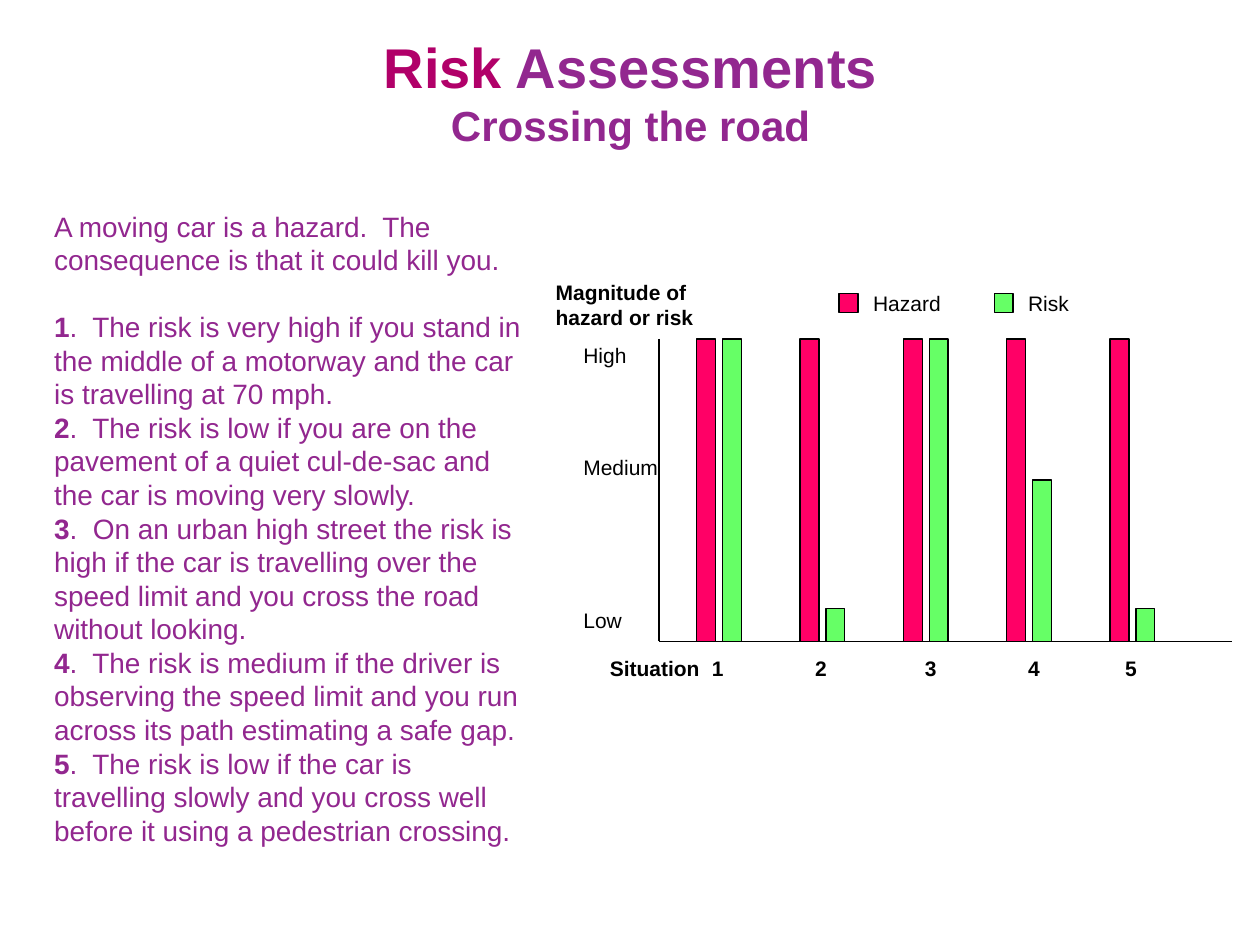
from dataclasses import dataclass

from lxml import etree
from pptx import Presentation
from pptx.dml.color import RGBColor
from pptx.enum.shapes import MSO_CONNECTOR, MSO_SHAPE
from pptx.enum.text import MSO_ANCHOR, MSO_AUTO_SIZE, PP_ALIGN
from pptx.oxml.ns import qn
from pptx.util import Inches, Pt

RECTANGLE = MSO_SHAPE.RECTANGLE
STRAIGHT = MSO_CONNECTOR.STRAIGHT
CENTER, LEFT = PP_ALIGN.CENTER, PP_ALIGN.LEFT
TOP = MSO_ANCHOR.TOP
NO_FIT = MSO_AUTO_SIZE.NONE


@dataclass(frozen=True)
class Theme:
    font: str = "Arial"
    purple: str = "92278F"
    crimson: str = "B10069"
    black: str = "000000"
    hazard: str = "FF0066"
    risk: str = "66FF66"
    title: int = 32
    subtitle: int = 24
    body: int = 16
    label: int = 12
    line: float = 0.75


THEME = Theme()

# Content
TITLE = ("Risk", " Assessments")
SUBTITLE = "Crossing the road"
INTRO = "A moving car is a hazard.  The consequence is that it could kill you."
SITUATIONS = [
    "The risk is very high if you stand in the middle of a motorway and the car "
    "is travelling at 70 mph.",
    "The risk is low if you are on the pavement of a quiet cul-de-sac and the car "
    "is moving very slowly.",
    "On an urban high street the risk is high if the car is travelling over the "
    "speed limit and you cross the road without looking.",
    "The risk is medium if the driver is observing the speed limit and you run "
    "across its path estimating a safe gap.",
    "The risk is low if the car is travelling slowly and you cross well before it "
    "using a pedestrian crossing.",
]
LEVELS = {"High": 2.4, "Medium": 1.28, "Low": 0.26}  # bar heights
LEVEL_TOPS = {"High": 2.69, "Medium": 3.58, "Low": 4.79}
# hazard level, risk level, offset of the number from the hazard bar
BARS = [
    ("High", "High", 0.05),
    ("High", "Low", 0.05),
    ("High", "High", 0.1),
    ("High", "Medium", 0.1),
    ("High", "Low", 0.05),
]
LEGEND = [("Hazard", THEME.hazard, 6.66), ("Risk", THEME.risk, 7.89)]

# Chart grid
AXIS_LEFT, AXIS_RIGHT = 5.23, 9.78
AXIS_TOP, BASELINE = 2.69, 5.09
FIRST_BAR, PITCH, PAIR_STEP, BAR_WIDTH = 5.53, 0.82, 0.205, 0.15
LABEL_HEIGHT = 0.26


def style(span, size, color, bold=False):
    span.font.name = THEME.font
    span.font.size = Pt(size)
    span.font.bold = bold
    span.font.color.rgb = RGBColor.from_string(color)


def place(box, left, top, width, height):
    box.left, box.top = Inches(left), Inches(top)
    box.width, box.height = Inches(width), Inches(height)


def add_span(para, text, size, color, bold=False):
    span = para.add_run()
    span.text = text
    style(span, size, color, bold)


def add_label(page, text, left, top, width, height=LABEL_HEIGHT, bold=False):
    box = page.shapes.add_textbox(
        Inches(left), Inches(top), Inches(width), Inches(height))
    frame = box.text_frame
    frame.word_wrap = True
    frame.margin_left = frame.margin_right = Inches(0.07)
    frame.margin_top = frame.margin_bottom = Inches(0.03)
    frame.text = text
    for para in frame.paragraphs:
        style(para.runs[0], THEME.label, THEME.black, bold)


def add_bar(page, left, top, height, color):
    bar = page.shapes.add_shape(
        RECTANGLE, Inches(left), Inches(top), Inches(BAR_WIDTH), Inches(height))
    bar.shadow.inherit = False
    bar.fill.solid()
    bar.fill.fore_color.rgb = RGBColor.from_string(color)
    bar.line.color.rgb = RGBColor.from_string(THEME.black)
    bar.line.width = Pt(THEME.line)


def add_axis(page, *ends):
    axis = page.shapes.add_connector(STRAIGHT, *(Inches(end) for end in ends))
    axis.line.color.rgb = RGBColor.from_string(THEME.black)
    axis.line.width = Pt(THEME.line)
    etree.SubElement(axis._element.spPr, qn("a:effectLst"))


def fill_title(box):
    place(box, 2.93, 0.21, 4.15, 1.04)
    frame = box.text_frame
    frame.auto_size, frame.word_wrap = NO_FIT, False
    frame.vertical_anchor = TOP
    heading, subheading = frame.paragraphs[0], frame.add_paragraph()
    for text, color in zip(TITLE, (THEME.crimson, THEME.purple)):
        add_span(heading, text, THEME.title, color, True)
    add_span(subheading, SUBTITLE, THEME.subtitle, THEME.purple, True)
    for para in frame.paragraphs:
        para.alignment = CENTER


def fill_body(box):
    place(box, 0.33, 1.61, 3.91, 5.22)
    frame = box.text_frame
    frame.auto_size, frame.word_wrap = NO_FIT, True
    frame.vertical_anchor = TOP
    intro = frame.paragraphs[0]
    add_span(intro, INTRO, THEME.body, THEME.purple)
    for number, text in enumerate(SITUATIONS, 1):
        para = frame.add_paragraph()
        add_span(para, str(number), THEME.body, THEME.purple, True)
        add_span(para, f".  {text}", THEME.body, THEME.purple)
    for para in frame.paragraphs:
        properties = para._p.get_or_add_pPr()
        properties.set("marL", "0")
        properties.set("indent", "0")
        etree.SubElement(properties, qn("a:buNone"))
        para.alignment = LEFT
        para.space_before = Pt(0)
    intro.space_after = Pt(19)


def draw_chart(page):
    # Axes and their labels
    add_axis(page, AXIS_LEFT, AXIS_TOP, AXIS_LEFT, BASELINE)
    add_axis(page, AXIS_LEFT, BASELINE, AXIS_RIGHT, BASELINE)
    for level, top in LEVEL_TOPS.items():
        add_label(page, level, 4.56, top, 0.89)
    add_label(page, "Magnitude of\nhazard or risk", 4.34, 2.19, 1.42, 0.46, True)
    add_label(page, "Situation", 4.77, 5.17, 0.96, bold=True)

    # Paired bars with their numbers
    for index, (hazard, risk, offset) in enumerate(BARS):
        left = FIRST_BAR + index * PITCH
        pair = ((hazard, THEME.hazard), (risk, THEME.risk))
        for step, (level, color) in enumerate(pair):
            height = LEVELS[level]
            add_bar(page, left + step * PAIR_STEP, BASELINE - height, height, color)
        add_label(page, str(index + 1), left + offset, 5.17, 0.22, bold=True)

    # Legend
    for name, color, left in LEGEND:
        add_bar(page, left, 2.33, BAR_WIDTH, color)
        add_label(page, name, left + 0.2, 2.28, 0.83)


def main():
    deck = Presentation()
    deck.slide_width, deck.slide_height = Inches(10), Inches(7.5)
    page = deck.slides.add_slide(deck.slide_layouts[1])
    fill_title(page.shapes.title)
    fill_body(page.placeholders[1])
    draw_chart(page)
    deck.save("out.pptx")


if __name__ == "__main__":
    main()
